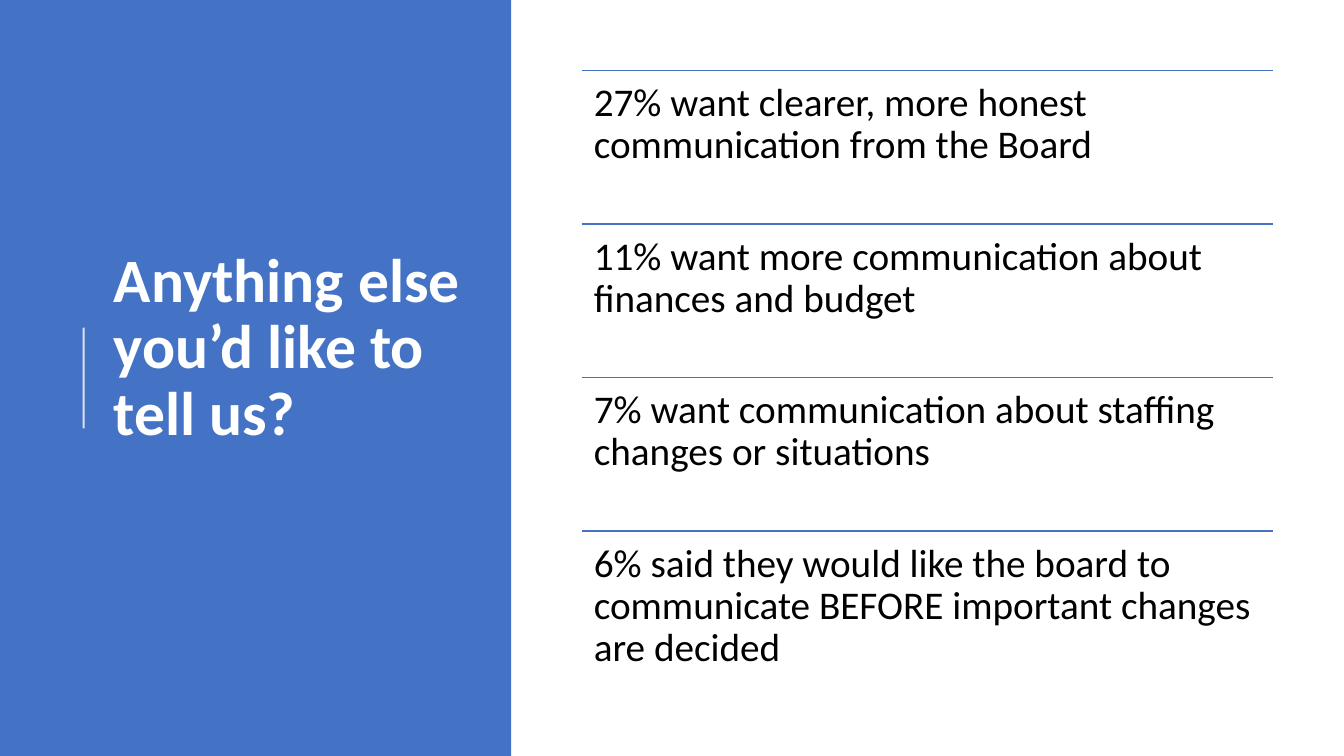
from pptx import Presentation
from pptx.dml.color import RGBColor
from pptx.enum.shapes import MSO_CONNECTOR, MSO_SHAPE
from pptx.enum.text import MSO_ANCHOR
from pptx.oxml.ns import qn
from pptx.util import Inches, Pt
from lxml.etree import SubElement

TITLE = "Anything else you’d like to tell us?"
POINTS = [
    "27% want clearer, more honest communication from the Board",
    "11% want more communication about finances and budget",
    "7% want communication about staffing changes or situations",
    "6% said they would like the board to communicate BEFORE important changes are decided",
]
BLUE = RGBColor(0x44, 0x72, 0xC4)
WHITE = RGBColor(0xFF, 0xFF, 0xFF)
BLACK = RGBColor(0, 0, 0)
FONT = "Calibri"
LEFT, TOP, WIDTH, STEP = 5.77, 0.7, 6.86, 1.523


def add_text(slide, text, box, size, color, bold=False,
             anchor=MSO_ANCHOR.TOP, inset=(0.12, 0.12, 0.12, 0.12)):
    frame = slide.shapes.add_textbox(*map(Inches, box)).text_frame
    frame.word_wrap = True
    frame.vertical_anchor = anchor
    (frame.margin_left, frame.margin_top,
     frame.margin_right, frame.margin_bottom) = map(Inches, inset)
    para = frame.paragraphs[0]
    para.line_spacing = 0.9
    run = para.add_run()
    run.text = text
    run.font.name = FONT
    run.font.size = Pt(size)
    run.font.bold = bold
    run.font.color.rgb = color


def add_line(slide, start, end, color, width, alpha=None):
    line = slide.shapes.add_connector(
        MSO_CONNECTOR.STRAIGHT, *map(Inches, start + end))
    line.line.color.rgb = color
    line.line.width = Pt(width)
    props = line._element.spPr
    if alpha:
        tint = props.find(".//" + qn("a:srgbClr"))
        SubElement(tint, qn("a:alpha")).set("val", str(alpha * 1000))
    SubElement(props, qn("a:effectLst"))


def main():
    deck = Presentation()
    deck.slide_width, deck.slide_height = Inches(13.33), Inches(7.5)
    slide = deck.slides.add_slide(deck.slide_layouts[6])

    panel = slide.shapes.add_shape(
        MSO_SHAPE.RECTANGLE, 0, 0, Inches(5.07), Inches(7.5))
    panel.shadow.inherit = False
    panel.fill.solid()
    panel.fill.fore_color.rgb = BLUE
    panel.line.fill.background()

    add_line(slide, (0.83, 4.25), (0.83, 3.25), WHITE, 1.5, alpha=80)
    add_text(slide, TITLE, (1.03, 0.78, 3.69, 6.02), 44, WHITE, bold=True,
             anchor=MSO_ANCHOR.MIDDLE, inset=(0.1, 0.05, 0.1, 0.71))

    for row, point in enumerate(POINTS):
        top = TOP + row * STEP
        add_line(slide, (LEFT, top), (LEFT + WIDTH, top), BLUE, 1)
        add_text(slide, point, (LEFT, top, WIDTH, STEP), 28, BLACK)

    deck.save("out.pptx")


if __name__ == "__main__":
    main()
